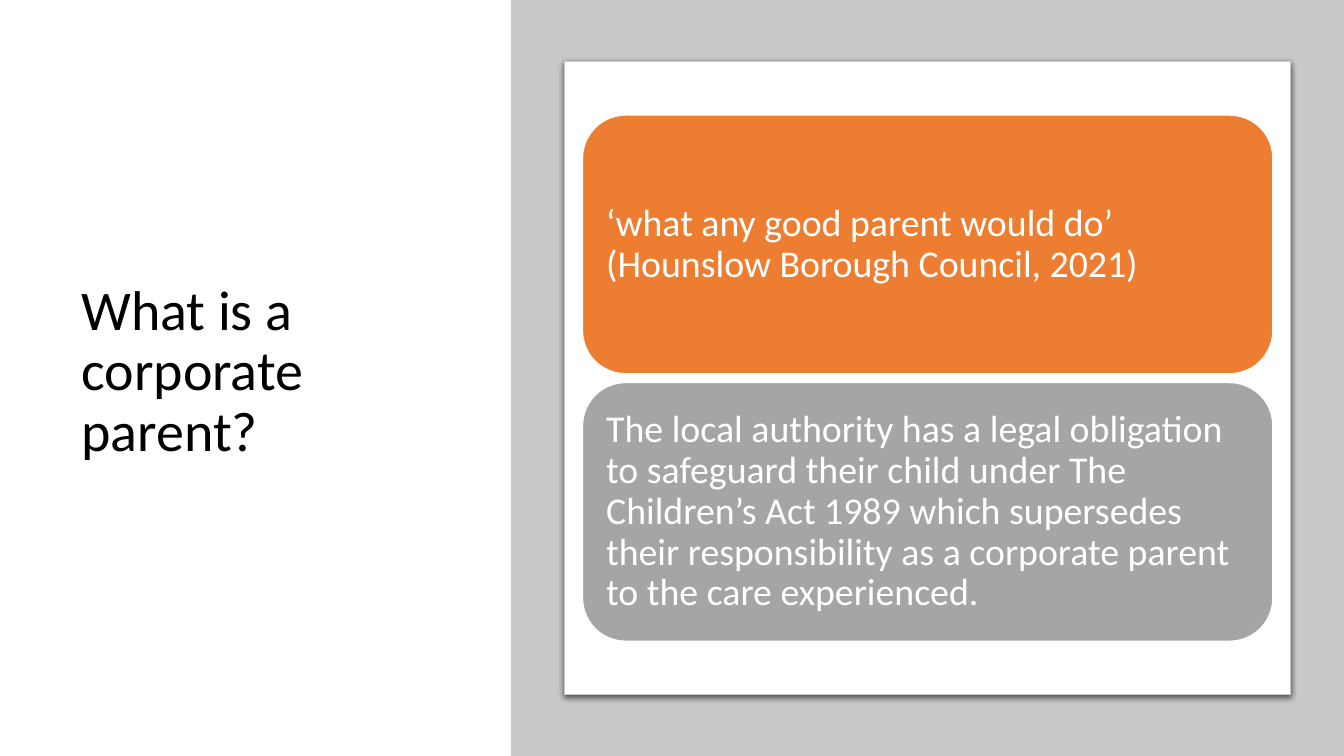
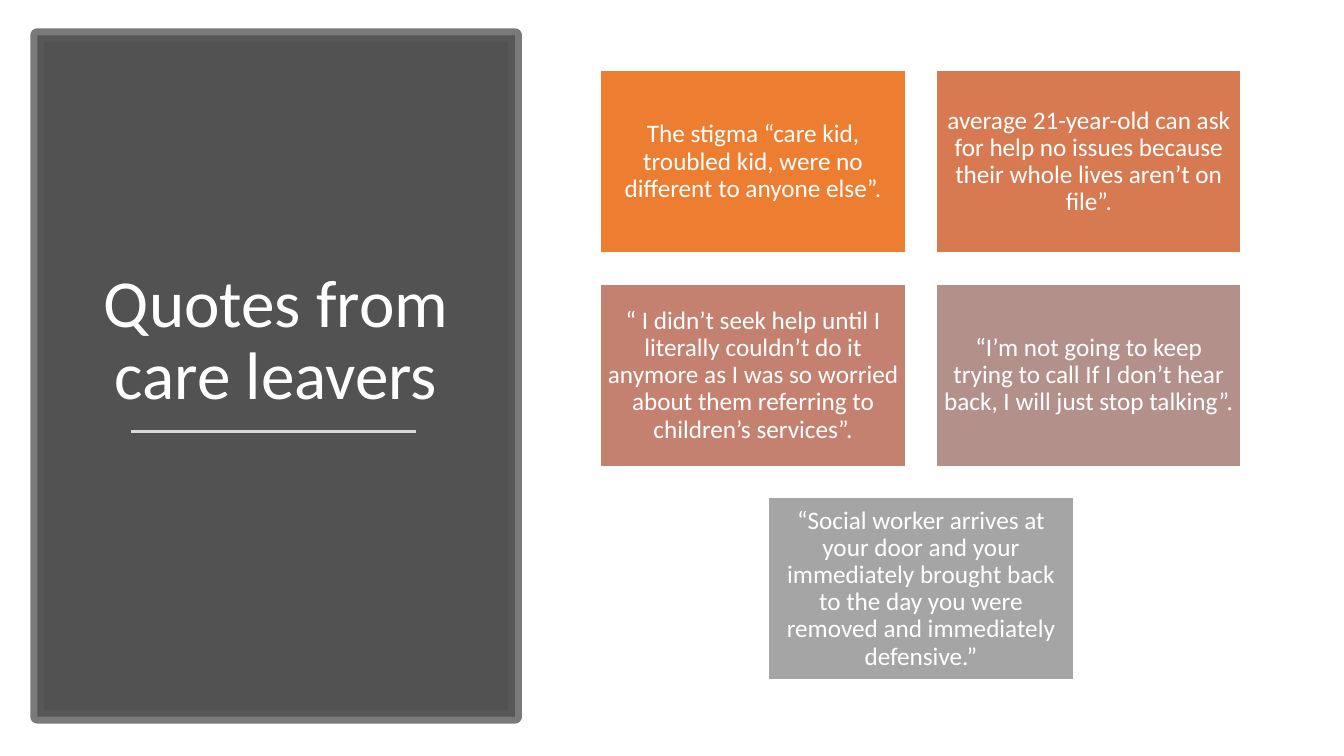
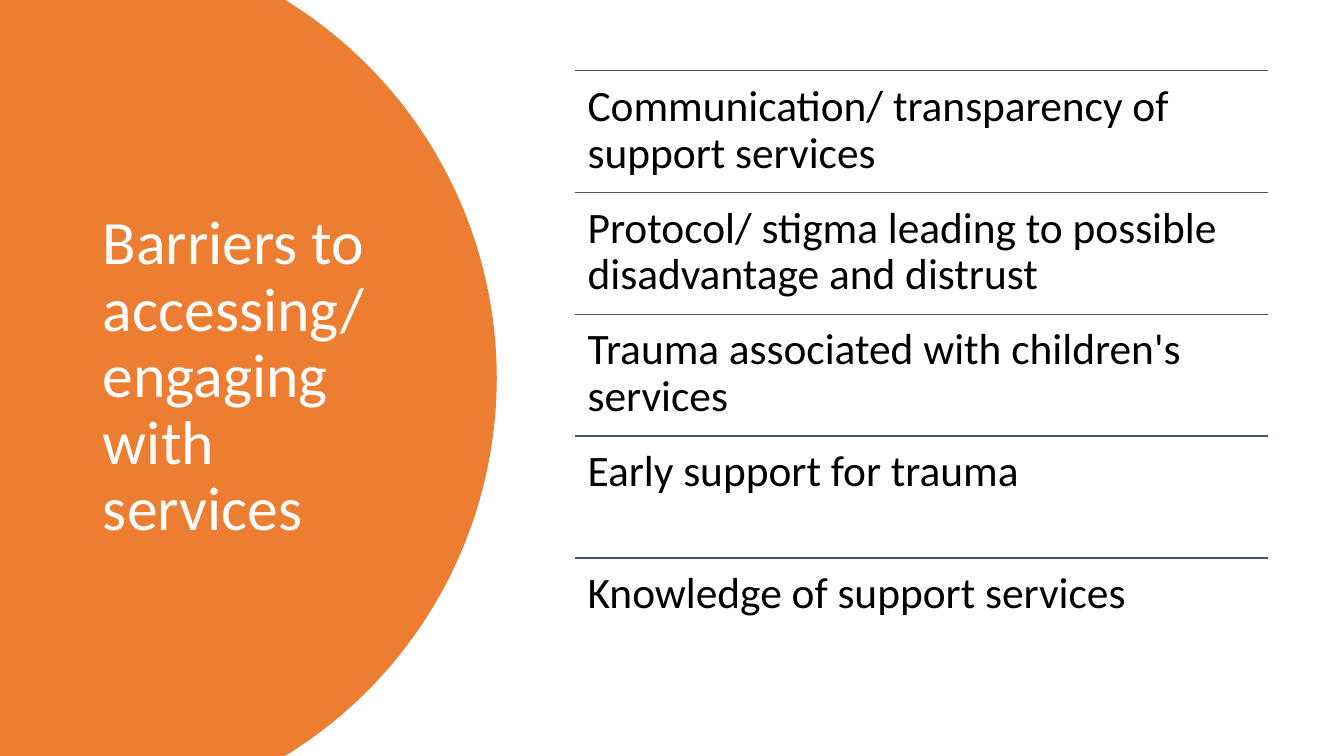
import dataclasses
import math

import pptx
import pptx.dml.color
import pptx.enum.shapes
import pptx.enum.text
import pptx.oxml
import pptx.oxml.ns
import pptx.util

Cm = pptx.util.Cm
Pt = pptx.util.Pt
qn = pptx.oxml.ns.qn
Shape = pptx.enum.shapes.MSO_SHAPE
Align = pptx.enum.text.PP_ALIGN
Anchor = pptx.enum.text.MSO_ANCHOR


@dataclasses.dataclass(frozen=True)
class Theme:
    font: str = "Calibri"
    wide: float = 33.87
    high: float = 19.05
    white: str = "FFFFFF"
    black: str = "000000"
    orange: str = "ED7D31"
    gray: str = "A5A5A5"
    pale: str = "C8CACA"
    dark: str = "404040"
    frame: str = "595959"
    light: str = "D9D9D9"
    navy: str = "44546A"
    blend: tuple = ("ED7D31", "D87A51", "C48170", "B4908B", "A5A5A5")
    small: int = 18
    body: int = 27
    large: int = 31


THEME = Theme()


def tint(code):
    return pptx.dml.color.RGBColor.from_string(code)


def write(shape, text, size, color, align=Align.LEFT, anchor=Anchor.MIDDLE, pad=None):
    frame = shape.text_frame
    frame.text = text
    frame.word_wrap = True
    frame.auto_size = pptx.enum.text.MSO_AUTO_SIZE.NONE
    frame.vertical_anchor = anchor
    if pad is not None:
        frame.margin_left = frame.margin_right = Cm(pad)
        frame.margin_top = frame.margin_bottom = Cm(pad)
    for para in frame.paragraphs:
        para.alignment = align
        para.line_spacing = 0.9
        for run in para.runs:
            run.font.name = THEME.font
            run.font.size = Pt(size)
            run.font.color.rgb = tint(color)


def paint(shape, fill, edge=None, width=1):
    shape.shadow.inherit = False
    shape.fill.solid()
    shape.fill.fore_color.rgb = tint(fill)
    if edge:
        shape.line.color.rgb = tint(edge)
        shape.line.width = Pt(width)
    else:
        shape.line.fill.background()


def block(slide, box, fill, edge=None, width=1, kind=Shape.RECTANGLE):
    shape = slide.shapes.add_shape(kind, *map(Cm, box))
    paint(shape, fill, edge, width)
    return shape


def fade(shape, *shares):
    colors = shape.element.spPr.iter(qn("a:srgbClr"))
    for color, share in zip(list(colors), shares):
        alpha = pptx.oxml.parse_xml(
            f'<a:alpha {pptx.oxml.ns.nsdecls("a")} val="{share * 1000}"/>')
        color.append(alpha)


def shade(shape):
    effects = shape.element.spPr.find(qn("a:effectLst"))
    effects.append(pptx.oxml.parse_xml(
        f'<a:outerShdw {pptx.oxml.ns.nsdecls("a")} blurRad="{Pt(4.5)}" '
        f'dist="{Pt(1.5)}" dir="5400000" algn="t" rotWithShape="0">'
        f'<a:srgbClr val="{THEME.black}"><a:alpha val="63000"/></a:srgbClr>'
        '</a:outerShdw>'))


def rule(slide, left, top, width, color, weight):
    line = slide.shapes.add_connector(
        pptx.enum.shapes.MSO_CONNECTOR.STRAIGHT,
        Cm(left), Cm(top), Cm(left + width), Cm(top))
    line.line.color.rgb = tint(color)
    line.line.width = Pt(weight)
    line.element.spPr.append(pptx.oxml.parse_xml(
        f'<a:effectLst {pptx.oxml.ns.nsdecls("a")}/>'))


def head(slide, box, text, size, color, **style):
    title = slide.shapes.title
    title.left, title.top, title.width, title.height = map(Cm, box)
    title.element.getparent().append(title.element)
    write(title, text, size, color, **style)


def dome(slide, center, radius, fill):
    half = THEME.high / 2
    reach = math.asin(half / radius)
    steps = 90
    turns = [reach * (2 * i / steps - 1) for i in range(steps + 1)]
    arc = [(Cm(center + radius * math.cos(turn)), Cm(half + radius * math.sin(turn)))
           for turn in turns]
    pen = slide.shapes.build_freeform(0, 0)
    pen.add_line_segments(arc + [(0, Cm(THEME.high))], close=True)
    paint(pen.convert_to_shape(), fill)


def parent(slide):
    left = 12.88
    block(slide, (left, 0, THEME.wide - left, THEME.high), THEME.pale)
    shade(block(slide, (14.22, 1.55, 18.31, 15.95), THEME.white, THEME.pale, 0.75))
    head(slide, (1.8, 1.75, 10.19, 15.29), "What is a corporate parent?", 40, THEME.black)
    cards = [
        (THEME.orange, "‘what any good parent would do’ (Hounslow Borough Council, 2021)"),
        (THEME.gray, "The local authority has a legal obligation to safeguard their child "
                     "under The Children’s Act 1989 which supersedes their responsibility "
                     "as a corporate parent to the care experienced."),
    ]
    for row, (fill, text) in enumerate(cards):
        card = block(slide, (14.68, 2.9 + row * 6.74, 17.4, 6.52), fill, THEME.white,
                     kind=Shape.ROUNDED_RECTANGLE)
        write(card, text, THEME.body, THEME.white, pad=0.28)


def quotes(slide):
    panel = block(slide, (0.94, 0.89, 12.04, 17.17), THEME.dark, THEME.frame, 10)
    fade(panel, 90, 80)
    head(slide, (1.88, 2.54, 10.16, 8.03), "Quotes from care leavers", 48, THEME.white,
         align=Align.CENTER, anchor=Anchor.BOTTOM)
    rule(slide, 3.3, 10.87, 7.19, THEME.light, 1.75)
    texts = [
        "The stigma “care kid, troubled kid, were no different to anyone else”.",
        "average 21-year-old can ask for help no issues because their whole lives "
        "aren’t on file”.",
        "“ I didn’t seek help until I literally couldn’t do it anymore as I was so "
        "worried about them referring to children’s services”.",
        "“I’m not going to keep trying to call If I don’t hear back, I will just "
        "stop talking”.",
        "“Social worker arrives at your door and your immediately brought back to the "
        "day you were removed and immediately defensive.”",
    ]
    wide, high, gap = 7.68, 4.6, 0.78
    for i, (fill, text) in enumerate(zip(THEME.blend, texts)):
        row, col = divmod(i, 2)
        if i == len(texts) - 1:
            col = 0.5
        box = (15.14 + col * (wide + gap), 1.78 + row * (high + gap), wide, high)
        write(block(slide, box, fill, THEME.white), text, THEME.small, THEME.white,
              align=Align.CENTER, pad=0.18)


def hurdles(slide):
    dome(slide, 1.35, 11.17, THEME.orange)
    head(slide, (2.34, 1.78, 8.2, 15.47), "Barriers to accessing/ engaging with services",
         44, THEME.white)
    texts = [
        "Communication/ transparency of support services",
        "Protocol/ stigma leading to possible disadvantage and distrust",
        "Trauma associated with children's services",
        "Early support for trauma",
        "Knowledge of support services",
    ]
    left, wide, high = 14.48, 17.48, 3.07
    for row, text in enumerate(texts):
        top = 1.78 + row * high
        rule(slide, left, top, wide, THEME.navy, 1)
        label = slide.shapes.add_textbox(*map(Cm, (left, top, wide, high)))
        write(label, text, THEME.large, THEME.black, anchor=Anchor.TOP, pad=0.33)


def main():
    deck = pptx.Presentation()
    deck.slide_width = Cm(THEME.wide)
    deck.slide_height = Cm(THEME.high)
    for build in (parent, quotes, hurdles):
        build(deck.slides.add_slide(deck.slide_layouts[5]))
    deck.save("out.pptx")


if __name__ == "__main__":
    main()
